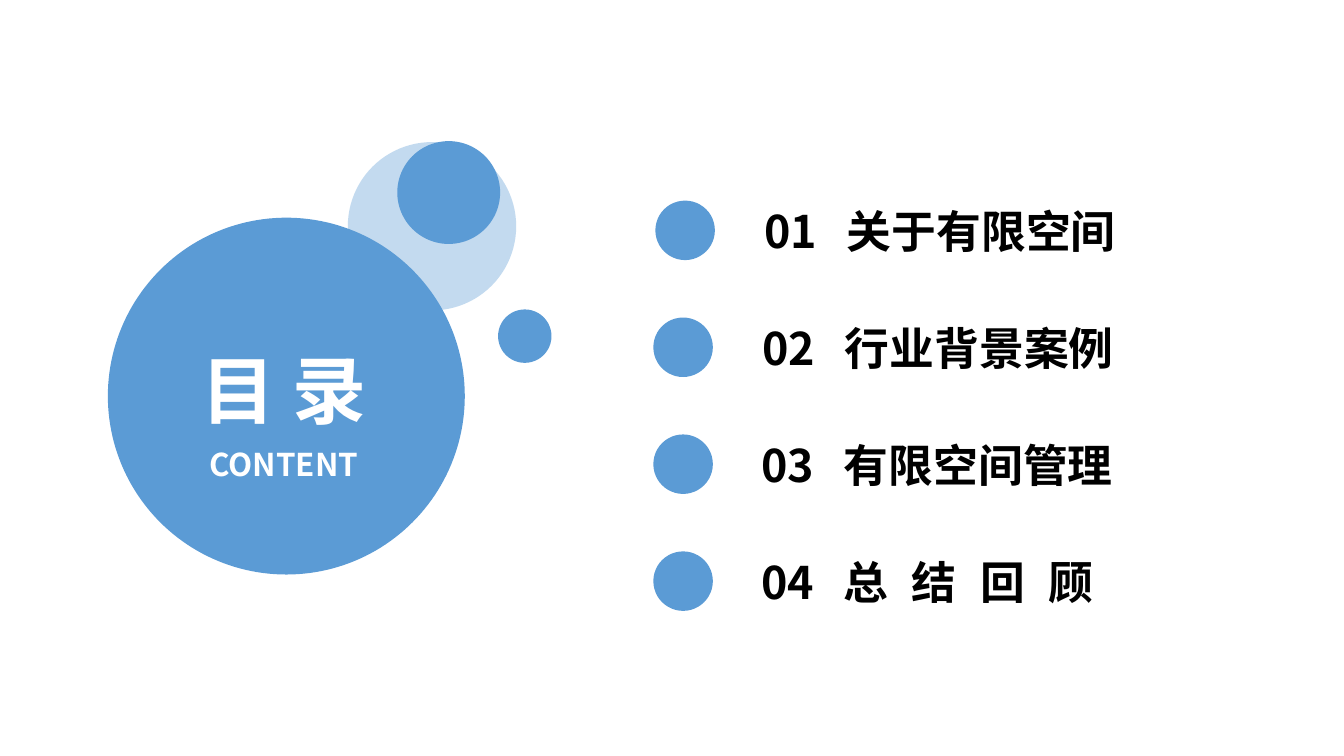
from dataclasses import dataclass
from typing import Optional

from lxml.etree import SubElement
from pptx import Presentation
from pptx.dml.color import RGBColor
from pptx.enum.shapes import MSO_SHAPE as Preset
from pptx.enum.text import MSO_AUTO_SIZE as AutoSize, PP_ALIGN as Align
from pptx.oxml.ns import qn
from pptx.shapes.shapetree import _BaseGroupShapes as Shapes
from pptx.text.text import _Paragraph as Paragraph
from pptx.util import Inches, Pt


@dataclass(frozen=True)
class Theme:
    font: str = "Noto Sans CJK SC"
    blue: RGBColor = RGBColor(0x5B, 0x9B, 0xD5)
    white: RGBColor = RGBColor(0xFF, 0xFF, 0xFF)
    black: RGBColor = RGBColor(0, 0, 0)
    title_size: int = 66
    subtitle_size: int = 28
    entry_size: int = 32


@dataclass(frozen=True)
class Circle:
    left: float
    top: float
    diameter: float
    opacity: Optional[int] = None


@dataclass(frozen=True)
class Entry:
    number: str
    title: str
    circle_left: float
    text_left: float
    text_width: float = 3.93
    spacing: float = 0


THEME = Theme()
BUBBLES = [Circle(3.45, 1.41, 1.67, opacity=36), Circle(3.94, 1.4, 1.02)]
DISCS = [Circle(4.94, 3.07, 0.53), Circle(1.07, 2.16, 3.54)]
ENTRIES = [
    Entry("01", "关于有限空间", 6.5, 7.48),
    Entry("02", "行业背景案例", 6.48, 7.46, text_width=4.53),
    Entry("03", "有限空间管理", 6.48, 7.45),
    Entry("04", "总 结 回 顾", 6.48, 7.45, spacing=4.7),
]
FIRST_TOP = 1.99
ROW_PITCH = 1.16
ENTRY_DIAMETER = 0.59
TITLE_TAB = 0.82


def add_circle(shapes: Shapes, circle: Circle) -> None:
    size = Inches(circle.diameter)
    disc = shapes.add_shape(
        Preset.OVAL, Inches(circle.left), Inches(circle.top), size, size
    )
    disc.shadow.inherit = False
    disc.fill.solid()
    disc.fill.fore_color.rgb = THEME.blue
    disc.line.fill.background()
    if circle.opacity is not None:
        color = disc.fill._xPr.find(f".//{qn('a:srgbClr')}")
        SubElement(color, qn("a:alpha"), val=str(circle.opacity * 1000))


def add_span(
    para: Paragraph, text: str, size: int, color: RGBColor,
    spacing: float = 0, small_caps: bool = False,
) -> None:
    span = para.add_run()
    span.text = text
    span.font.name = THEME.font
    span.font.size = Pt(size)
    span.font.bold = True
    span.font.color.rgb = color
    properties = span._r.get_or_add_rPr()
    SubElement(properties, qn("a:ea"), typeface=THEME.font)
    if spacing:
        properties.set("spc", str(round(spacing * 100)))
    if small_caps:
        properties.set("cap", "small")


def add_heading(shapes: Shapes) -> None:
    box = shapes.add_textbox(Inches(1.67), Inches(3.2), Inches(2.29), Inches(1.66))
    frame = box.text_frame
    frame.word_wrap = False
    frame.auto_size = AutoSize.SHAPE_TO_FIT_TEXT
    frame.margin_left = frame.margin_right = Inches(0.08)
    frame.margin_top = frame.margin_bottom = Inches(0.04)
    lines = [("目 录", THEME.title_size), ("content", THEME.subtitle_size)]
    for index, (text, size) in enumerate(lines):
        para = frame.add_paragraph() if index else frame.paragraphs[0]
        para.alignment = Align.CENTER
        add_span(para, text, size, THEME.white, small_caps=True)


def add_entry(shapes: Shapes, entry: Entry, top: float) -> None:
    add_circle(shapes, Circle(entry.circle_left, top, ENTRY_DIAMETER))
    box = shapes.add_textbox(
        Inches(entry.text_left), Inches(top - 0.02),
        Inches(entry.text_width), Inches(0.64),
    )
    frame = box.text_frame
    frame.word_wrap = True
    frame.auto_size = AutoSize.SHAPE_TO_FIT_TEXT
    para = frame.paragraphs[0]
    tabs = SubElement(para._p.get_or_add_pPr(), qn("a:tabLst"))
    SubElement(tabs, qn("a:tab"), pos=str(Inches(TITLE_TAB)), algn="l")
    add_span(para, f"{entry.number}\t", THEME.entry_size, THEME.black)
    add_span(para, entry.title, THEME.entry_size, THEME.black, entry.spacing)


def main() -> None:
    deck = Presentation()
    deck.slide_width = Inches(13.33)
    deck.slide_height = Inches(7.5)
    page = deck.slides.add_slide(deck.slide_layouts[6])
    bubble_group = page.shapes.add_group_shape()
    for bubble in BUBBLES:
        add_circle(bubble_group.shapes, bubble)
    for disc in DISCS:
        add_circle(page.shapes, disc)
    add_heading(page.shapes)
    for row, entry in enumerate(ENTRIES):
        add_entry(page.shapes, entry, FIRST_TOP + row * ROW_PITCH)
    deck.save("out.pptx")


if __name__ == "__main__":
    main()
